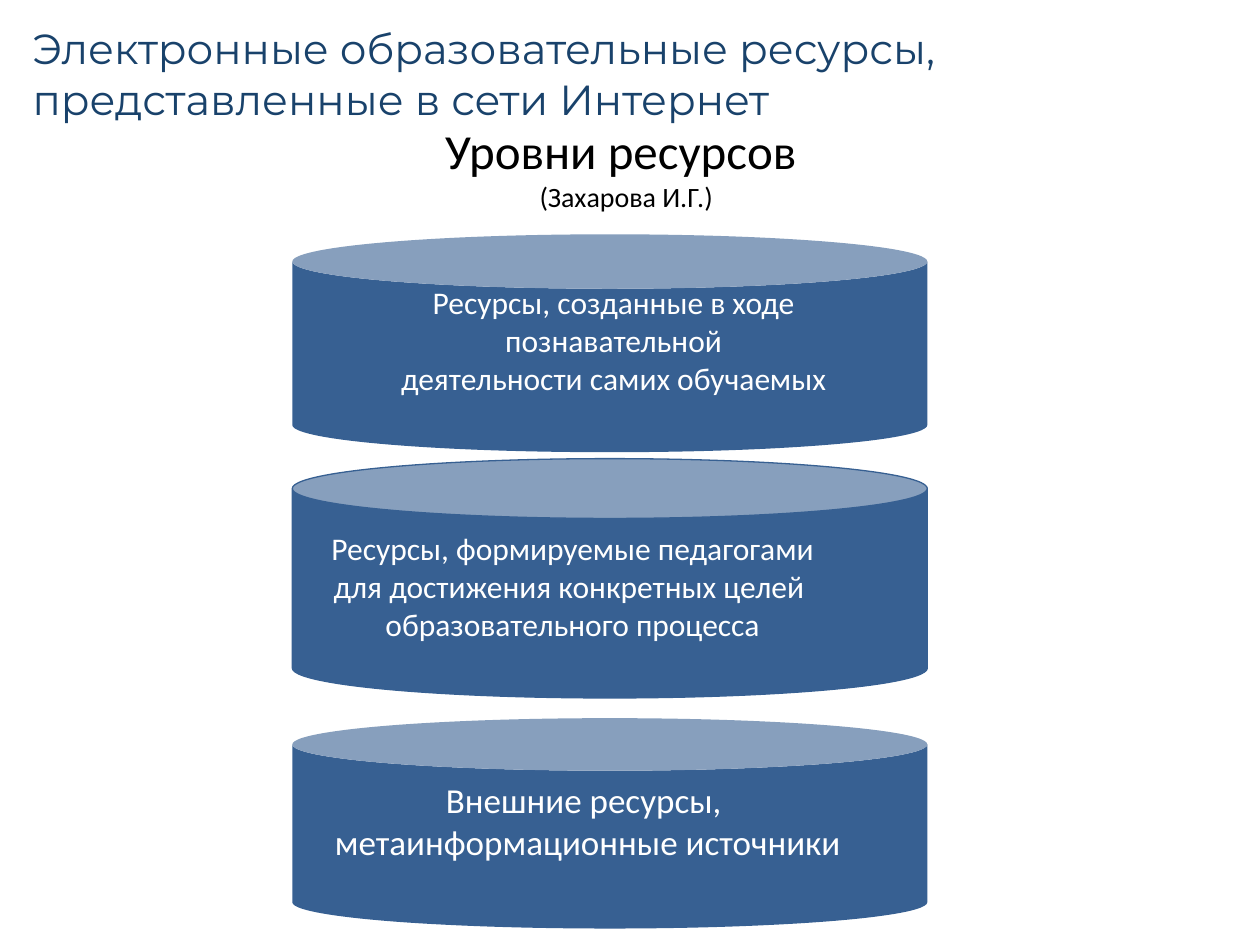
from pptx import Presentation
from pptx.dml.color import RGBColor
from pptx.enum.shapes import MSO_SHAPE
from pptx.enum.text import MSO_ANCHOR, PP_ALIGN
from pptx.util import Inches, Pt

CAN = MSO_SHAPE.CAN
MIDDLE = MSO_ANCHOR.MIDDLE
LEFT, CENTER = PP_ALIGN.LEFT, PP_ALIGN.CENTER

BLACK = RGBColor(0x00, 0x00, 0x00)
WHITE = RGBColor(0xFF, 0xFF, 0xFF)
BLUE = RGBColor(0x37, 0x60, 0x92)
NAVY = RGBColor(0x19, 0x42, 0x6B)

CAN_LEFT, CAN_WIDTH = 2.32, 5.04

# Cylinders from bottom to top: top, height, outlined
CANS = [(5.7, 1.67, False), (3.64, 1.9, True), (1.86, 1.73, False)]

# Labels: box, font size, wraps, lines
LABELS = [
    ((2.48, 2.2, 4.78, 1), 18, True,
     ["Ресурсы, созданные в ходе познавательной",
      "деятельности самих обучаемых"]),
    ((2.54, 6.13, 4.25, 0.77), 20, False,
     ["Внешние ресурсы, ", "метаинформационные источники"]),
    ((2.51, 4.15, 4.07, 1.01), 18, False,
     ["Ресурсы, формируемые педагогами",
      "для достижения конкретных целей ",
      "образовательного процесса"]),
]


def set_title(s, box):
    title = s.shapes.title
    title.left, title.top, title.width, title.height = map(Inches, box)
    tf = title.text_frame
    tf.vertical_anchor = MIDDLE
    p = tf.paragraphs[0]
    p.alignment = CENTER
    p.font.name = "Calibri"
    p.font.color.rgb = BLACK
    r = p.add_run()
    r.text = "Уровни ресурсов "
    r.font.size = Pt(28)
    p.add_line_break()
    r = p.add_run()
    r.text = "(Захарова И.Г.)"
    r.font.size = Pt(16)


def add_can(s, top, height, outlined):
    sp = s.shapes.add_shape(CAN, Inches(CAN_LEFT), Inches(top),
                            Inches(CAN_WIDTH), Inches(height))
    sp.shadow.inherit = False
    sp.adjustments[0] = 0.25
    sp.fill.solid()
    sp.fill.fore_color.rgb = BLUE
    if outlined:
        sp.line.color.rgb = BLUE
        sp.line.width = Pt(0.75)
    else:
        sp.line.fill.background()


def add_text(s, box, lines, size, color, font="Calibri", align=CENTER, wrap=True):
    tf = s.shapes.add_textbox(*map(Inches, box)).text_frame
    tf.word_wrap = wrap
    for i, line in enumerate(lines):
        p = tf.add_paragraph() if i else tf.paragraphs[0]
        p.text = line
        p.alignment = align
        p.font.name = font
        p.font.size = Pt(size)
        p.font.color.rgb = color
    return tf


def main():
    prs = Presentation()
    prs.slide_width, prs.slide_height = Inches(10), Inches(7.5)
    s = prs.slides.add_slide(prs.slide_layouts[5])
    set_title(s, (0.47, 0.7, 9, 1.25))
    for top, height, outlined in CANS:
        add_can(s, top, height, outlined)
    for box, size, wrap, lines in LABELS:
        add_text(s, box, lines, size, WHITE, wrap=wrap)
    heading = add_text(
        s, (0.16, 0.23, 9.15, 0.7),
        ["Электронные образовательные ресурсы, представленные в сети Интернет"],
        24, NAVY, font="Montserrat", align=LEFT)
    heading.vertical_anchor = MIDDLE
    prs.save("out.pptx")


if __name__ == "__main__":
    main()
